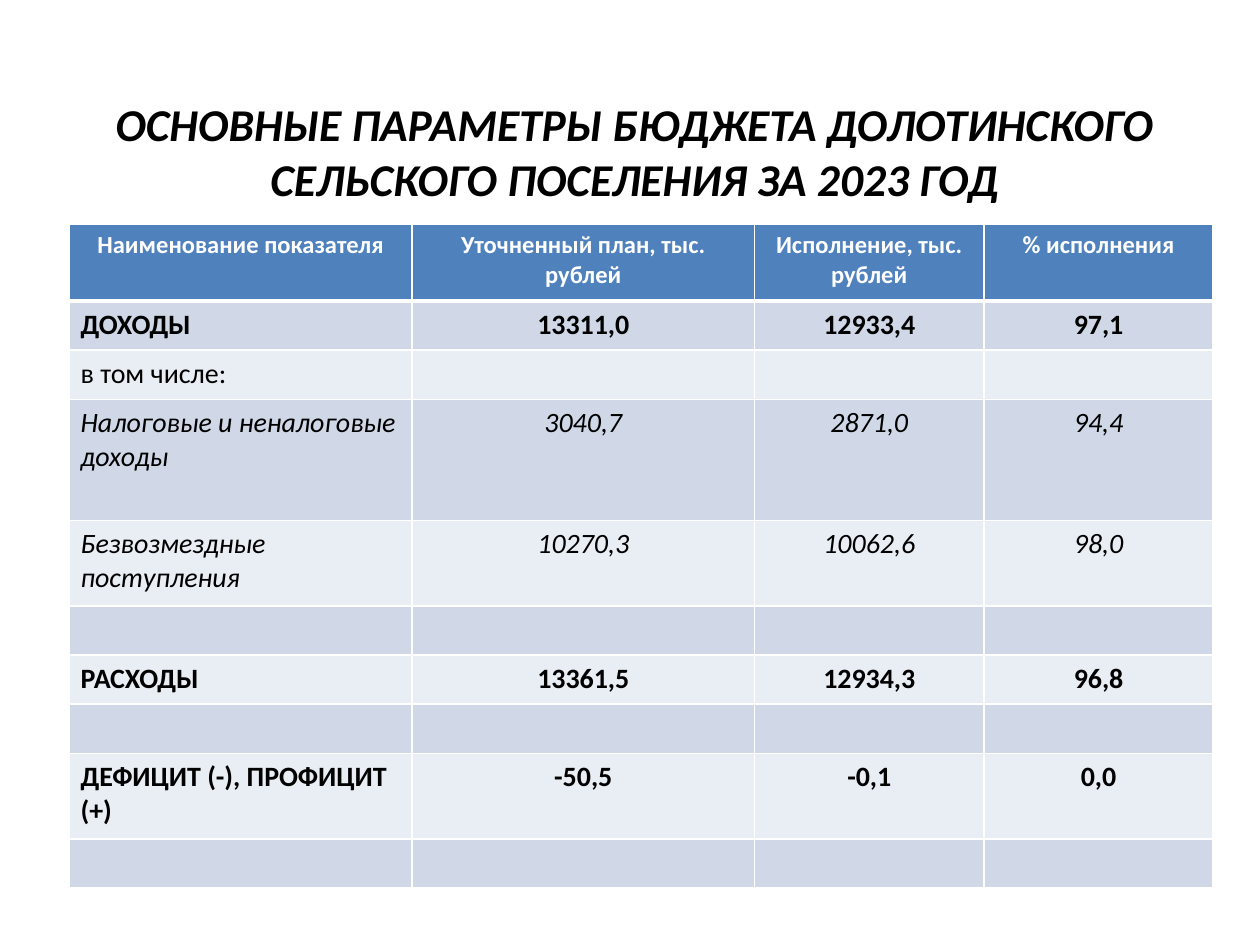
from pptx import Presentation
from pptx.dml.color import RGBColor
from pptx.enum.text import MSO_ANCHOR as Anchor, PP_ALIGN as Align
from pptx.oxml.ns import qn
from pptx.util import Inches, Pt
from lxml.etree import SubElement

COLORS = {"text": "000000", "white": "FFFFFF", "header": "4F81BD",
          "dark_band": "D0D8E8", "light_band": "E9EDF4"}
TITLE = "ОСНОВНЫЕ ПАРАМЕТРЫ БЮДЖЕТА ДОЛОТИНСКОГО СЕЛЬСКОГО ПОСЕЛЕНИЯ ЗА 2023 ГОД"
EMPTY = ("", "", "", "")
ROWS = [
    (0.61, "bold", ("Наименование показателя", "Уточненный план, тыс. рублей",
                    "Исполнение, тыс. рублей", "% исполнения")),
    (0.39, "bold", ("ДОХОДЫ", "13311,0", "12933,4", "97,1")),
    (0.39, "plain", ("в том числе:", "", "", "")),
    (0.96, "italic", ("Налоговые и неналоговые доходы", "3040,7", "2871,0", "94,4")),
    (0.68, "italic", ("Безвозмездные поступления", "10270,3", "10062,6", "98,0")),
    (0.39, "plain", EMPTY),
    (0.39, "bold", ("РАСХОДЫ", "13361,5", "12934,3", "96,8")),
    (0.39, "plain", EMPTY),
    (0.68, "bold", ("ДЕФИЦИТ (-), ПРОФИЦИТ (+)", "-50,5", "-0,1", "0,0")),
    (0.39, "plain", EMPTY),
]
COLUMN_WIDTHS = (2.72, 2.72, 1.82, 1.82)


class SlideBuilder:
    """Draws styled elements on the current slide."""

    def __init__(self, slide, font="Calibri"):
        self.slide = slide
        self.font = font

    def color(self, name):
        return RGBColor.from_string(COLORS[name])

    def add_text(self, paragraph, text, size, color, align, bold=False, italic=False):
        paragraph.alignment = align
        if not text:
            paragraph._p.get_or_add_endParaRPr().set("sz", str(size * 100))
            return
        run = paragraph.add_run()
        run.text = text
        run.font.name = self.font
        run.font.size = Pt(size)
        run.font.bold = bold
        run.font.italic = italic
        run.font.color.rgb = self.color(color)

    def title(self, text, left, top, width, height):
        shape = self.slide.shapes.title
        shape.left, shape.top = Inches(left), Inches(top)
        shape.width, shape.height = Inches(width), Inches(height)
        frame = shape.text_frame
        frame.word_wrap = True
        frame.vertical_anchor = Anchor.MIDDLE
        self.add_text(frame.paragraphs[0], text, 26, "text", Align.CENTER, True, True)

    def borders(self, cell, top=1, bottom=1):
        properties = cell._tc.get_or_add_tcPr()
        for side, width in (("L", 1), ("R", 1), ("T", top), ("B", bottom)):
            line = SubElement(properties, qn(f"a:ln{side}"), w=str(Pt(width)))
            fill = SubElement(line, qn("a:solidFill"))
            SubElement(fill, qn("a:srgbClr"), val=COLORS["white"])

    def cell(self, cell, text, row, column, style):
        header = row == 0
        self.borders(cell, top=3 if row == 1 else 1, bottom=3 if header else 1)
        band = "header" if header else "dark_band" if row % 2 else "light_band"
        cell.fill.solid()
        cell.fill.fore_color.rgb = self.color(band)
        cell.margin_left = cell.margin_right = Inches(0.09)
        cell.margin_top = cell.margin_bottom = Inches(0.05)
        align = Align.CENTER if header or column else Align.LEFT
        self.add_text(cell.text_frame.paragraphs[0], text, 14 if header else 16,
                      "white" if header else "text", align,
                      style == "bold", style == "italic")

    def table(self, rows, widths, left, top):
        height = sum(row[0] for row in rows)
        table = self.slide.shapes.add_table(
            len(rows), len(widths), Inches(left), Inches(top),
            Inches(sum(widths)), Inches(height)).table
        for column, width in zip(table.columns, widths):
            column.width = Inches(width)
        for row, (row_height, style, texts) in enumerate(rows):
            table.rows[row].height = Inches(row_height)
            for column, text in enumerate(texts):
                self.cell(table.cell(row, column), text, row, column, style)


def main():
    presentation = Presentation()
    presentation.slide_width = Inches(10)
    presentation.slide_height = Inches(7.5)
    slide = presentation.slides.add_slide(presentation.slide_layouts[5])
    builder = SlideBuilder(slide)
    builder.title(TITLE, 0.12, 0.62, 9.84, 1.15)
    builder.table(ROWS, COLUMN_WIDTHS, 0.55, 1.78)
    presentation.save("out.pptx")


if __name__ == "__main__":
    main()
